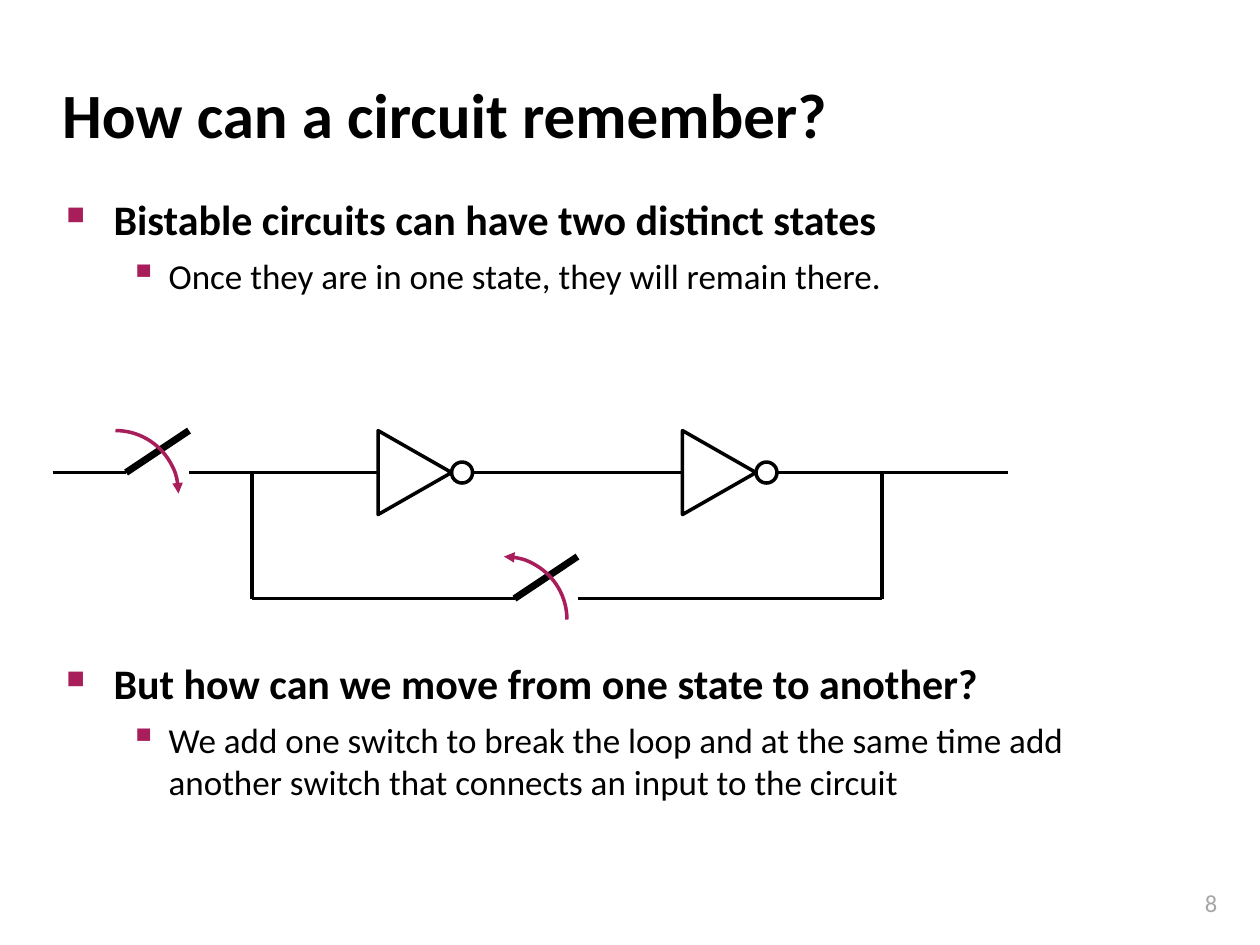
import pptx
import pptx.dml.color
import pptx.enum.shapes
import pptx.enum.text
import pptx.oxml.ns
import pptx.util
from lxml import etree
from pptx.util import Cm, Pt

COLORS = {"ink": "000000", "accent": "A81E5B", "muted": "A6A6A6"}
FONT = "Calibri"
SHAPE = pptx.enum.shapes.MSO_SHAPE
ALIGN = pptx.enum.text.PP_ALIGN

# Heading and detail styles: level, size, bold, margin, indent, bullet, bullet size
HEADING = (0, 24, True, 0.95, -0.95, "■", 60)
DETAIL = (1, 20, False, 2.06, -0.79, "▪", 110)
CIRCUIT_COLUMNS = 91  # grid columns across the circuit


def rgb(name):
    return pptx.dml.color.RGBColor.from_string(COLORS[name])


def add_child(parent, tag, **attributes):
    return etree.SubElement(parent, pptx.oxml.ns.qn(tag), attributes)


def add_run(paragraph, text, size, color="ink", bold=False):
    run = paragraph.add_run()
    run.text = text
    run.font.name = FONT
    run.font.size = Pt(size)
    run.font.bold = bold
    run.font.color.rgb = rgb(color)


def place(shape, box):
    shape.left, shape.top, shape.width, shape.height = (Cm(v) for v in box)


def add_text_box(slide, box):
    frame = slide.shapes.add_textbox(*(Cm(v) for v in box)).text_frame
    frame.word_wrap = True
    return frame


def add_title(slide, box, text):
    title = slide.shapes.title
    place(title, box)
    frame = title.text_frame
    frame.auto_size = pptx.enum.text.MSO_AUTO_SIZE.NONE
    frame.vertical_anchor = pptx.enum.text.MSO_ANCHOR.MIDDLE
    paragraph = frame.paragraphs[0]
    paragraph.alignment = ALIGN.LEFT
    add_run(paragraph, text, 36, bold=True)


def add_body(slide, box, items):
    frame = add_text_box(slide, box)
    for index, (style, space_before, text) in enumerate(items):
        level, size, bold, margin, indent, bullet, bullet_size = style
        paragraph = frame.add_paragraph() if index else frame.paragraphs[0]
        paragraph.level = level
        paragraph.space_before = Pt(space_before)
        properties = paragraph._p.get_or_add_pPr()
        properties.set("marL", str(Cm(margin)))
        properties.set("indent", str(Cm(indent)))
        bullet_color = add_child(properties, "a:buClr")
        add_child(bullet_color, "a:srgbClr", val=COLORS["accent"])
        add_child(properties, "a:buSzPct", val=str(bullet_size * 1000))
        add_child(properties, "a:buChar", char=bullet)
        add_run(paragraph, text, size, bold=bold)


def add_page_number(slide, box, number):
    paragraph = add_text_box(slide, box).paragraphs[0]
    paragraph.alignment = ALIGN.RIGHT
    add_run(paragraph, number, 14, "muted")


def add_circuit(slide, box):
    left, top, width, _ = box
    unit = width / CIRCUIT_COLUMNS

    def position(x, y):
        return Cm(left + x * unit), Cm(top + y * unit)

    def add_wire(shapes, x1, y1, x2, y2, weight=2):
        wire = shapes.add_connector(
            pptx.enum.shapes.MSO_CONNECTOR.STRAIGHT, *position(x1, y1), *position(x2, y2))
        wire.line.color.rgb = rgb("ink")
        wire.line.width = Pt(weight)
        add_child(wire._element.spPr, "a:effectLst")

    def add_outline(shapes, kind, x, y, columns, rows, color="ink"):
        shape = shapes.add_shape(
            kind, *position(x, y), Cm(columns * unit), Cm(rows * unit))
        shape.shadow.inherit = False
        shape.fill.background()
        shape.line.color.rgb = rgb(color)
        shape.line.width = Pt(2)
        return shape

    def add_inverter(x, y):
        shapes = slide.shapes.add_group_shape().shapes
        # The triangle is 8 wide and 7 high before it turns to point right
        triangle = add_outline(shapes, SHAPE.ISOSCELES_TRIANGLE, x + 4.5, y - 3.5, 8, 7)
        triangle.rotation = 90
        add_outline(shapes, SHAPE.OVAL, x + 12, y - 1, 2, 2)
        add_wire(shapes, x, y, x + 5, y)
        add_wire(shapes, x + 14, y, x + 19, y)

    def add_switch(x, y, arrow_end):
        add_wire(slide.shapes, x, y, x + 6, y - 4, weight=4)
        arc = add_outline(slide.shapes, SHAPE.ARC, x - 7, y - 4, 12, 12, "accent")
        add_child(arc.line._get_or_add_ln(), arrow_end, type="triangle")

    main, loop = 4, 16  # rows of the two horizontal wires
    for x in (26, 55):
        add_inverter(x, main)
    for start, end in ((0, 7), (13, 19), (19, 26), (45, 55), (74, 79), (79, 91)):
        add_wire(slide.shapes, start, main, end, main)
    for start, end in ((19, 44), (50, 79)):
        add_wire(slide.shapes, start, loop, end, loop)
    for x in (19, 79):
        add_wire(slide.shapes, x, main, x, loop)
    add_switch(7, main, "a:tailEnd")
    add_switch(44, loop, "a:headEnd")


def main():
    presentation = pptx.Presentation()
    presentation.slide_width, presentation.slide_height = Cm(25.4), Cm(19.05)
    slide = presentation.slides.add_slide(presentation.slide_layouts.get_by_name("Title Only"))

    add_page_number(slide, (22.86, 17.78, 1.93, 0.86), "8")
    add_title(slide, (1, 1.22, 21.08, 2.11), "How can a circuit remember?")
    # The large space before the second heading leaves room for the circuit
    add_body(slide, (1.09, 3.78, 21.95, 13.36), [
        (HEADING, 0, "Bistable circuits can have two distinct states"),
        (DETAIL, 6, "Once they are in one state, they will remain there."),
        (HEADING, 206, "But how can we move from one state to another?"),
        (DETAIL, 6, "We add one switch to break the loop and at the same time add "
                    "another switch that connects an input to the circuit"),
    ])
    add_circuit(slide, (1.06, 8.68, 19.26, 3.81))
    presentation.save("out.pptx")


if __name__ == "__main__":
    main()
